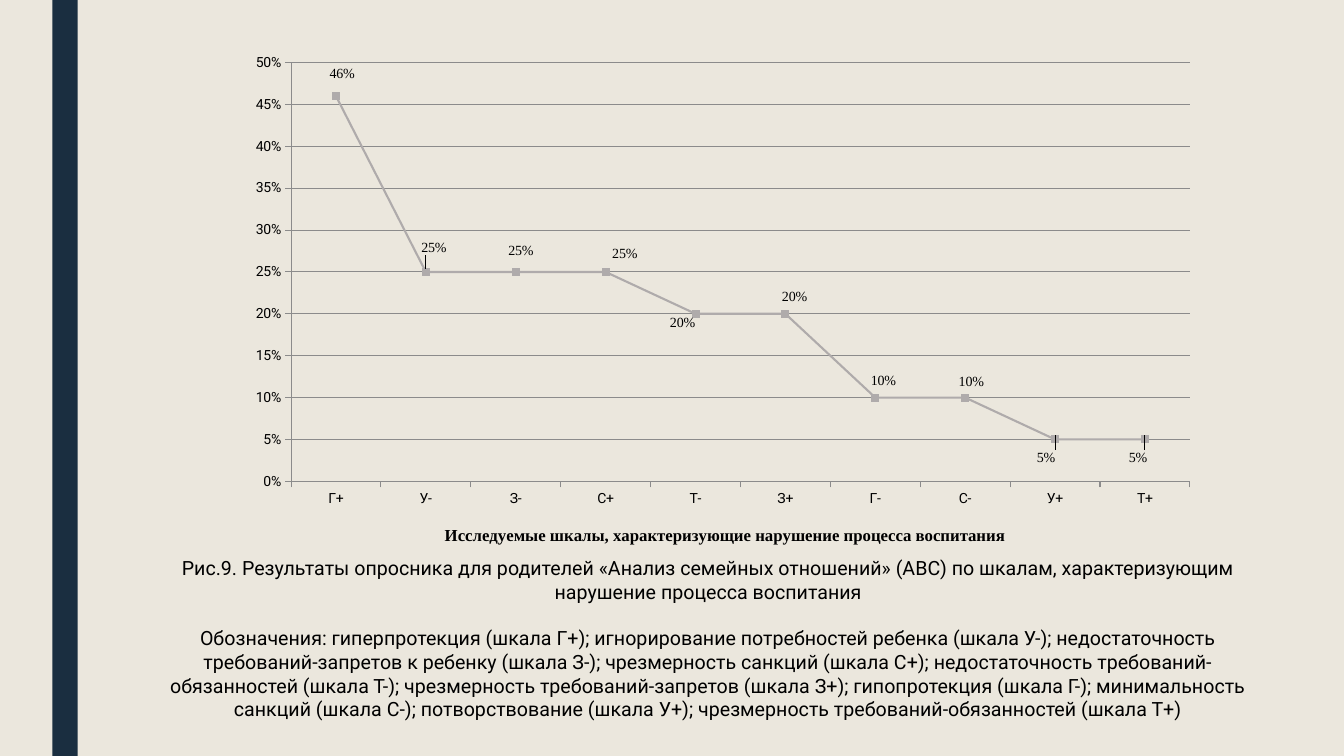
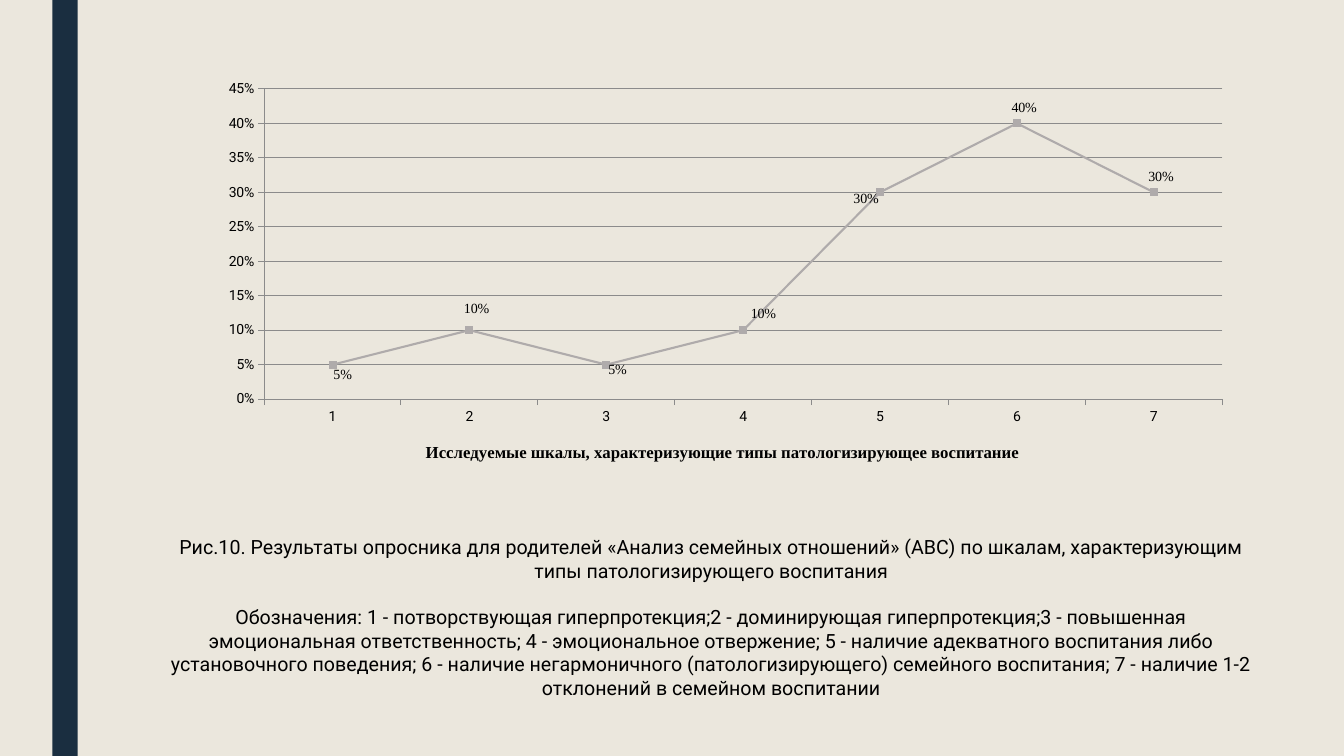
from dataclasses import dataclass

from lxml import etree
from pptx import Presentation
from pptx import util as u
from pptx.chart import data as chart_data
from pptx.dml.color import RGBColor
from pptx.enum import chart as charts
from pptx.enum import shapes, text
from pptx.oxml.ns import qn

# Shared look
PAPER = RGBColor(0xEB, 0xE7, 0xDD)
NAVY = RGBColor(0x1A, 0x2E, 0x40)
BLACK = RGBColor(0, 0, 0)
SERIES_GRAY = RGBColor(0xAF, 0xAB, 0xAB)
AXIS_GRAY = RGBColor(0x8B, 0x8B, 0x8B)
SANS, SERIF = "Roboto", "Times New Roman"
LABEL_RISE = -0.12  # centre of a label placed above its point, in inches


@dataclass(frozen=True)
class Box:
    left: float
    top: float
    width: float
    height: float

    def lengths(self) -> list[u.Length]:
        return [u.Inches(n) for n in (self.left, self.top, self.width, self.height)]


@dataclass(frozen=True)
class Reading:
    scale: str
    share: float
    dx: float  # label centre relative to the point, in inches
    dy: float


@dataclass(frozen=True)
class Figure:
    chart_box: Box
    plot_area: Box  # fractions of the chart
    top_share: float
    axis_title: str
    title_corner: tuple[float, float]  # fractions of the chart
    readings: list[Reading]
    caption_box: Box
    caption: str
    legend: str


FIGURES = [
    Figure(
        chart_box=Box(2.12, 0.32, 9.83, 5.28),
        plot_area=Box(0.078, 0.057, 0.907, 0.787),
        top_share=0.5,
        axis_title="Исследуемые шкалы, характеризующие нарушение процесса воспитания",
        title_corner=(0.23, 0.92),
        readings=[
            Reading("Г+", 0.46, 0.06, -0.19),
            Reading("У-", 0.25, 0.08, -0.21),
            Reading("З-", 0.25, 0.05, -0.18),
            Reading("С+", 0.25, 0.19, -0.15),
            Reading("Т-", 0.2, -0.13, 0.12),
            Reading("З+", 0.2, 0.09, -0.14),
            Reading("Г-", 0.1, 0.08, -0.13),
            Reading("С-", 0.1, 0.06, -0.12),
            Reading("У+", 0.05, -0.09, 0.21),
            Reading("Т+", 0.05, -0.07, 0.21),
        ],
        caption_box=Box(1.31, 5.47, 11.43, 2.05),
        caption="Рис.9. Результаты опросника для родителей «Анализ семейных отношений» (АВС) "
                "по шкалам, характеризующим нарушение процесса воспитания",
        legend="Обозначения: гиперпротекция (шкала Г+); игнорирование потребностей ребенка "
               "(шкала У-); недостаточность требований-запретов к ребенку (шкала З-); "
               "чрезмерность санкций (шкала С+); недостаточность требований-обязанностей "
               "(шкала Т-); чрезмерность требований-запретов (шкала З+); гипопротекция "
               "(шкала Г-); минимальность санкций (шкала С-); потворствование (шкала У+); "
               "чрезмерность требований-обязанностей (шкала Т+)",
    ),
    Figure(
        chart_box=Box(1.78, 0.63, 10.49, 4.43),
        plot_area=Box(0.08, 0.057, 0.906, 0.695),
        top_share=0.45,
        axis_title="Исследуемые шкалы, характеризующие типы патологизирующее воспитание",
        title_corner=(0.23, 0.84),
        readings=[
            Reading("1", 0.05, 0.1, 0.13),
            Reading("2", 0.1, 0.07, -0.18),
            Reading("3", 0.05, 0.11, 0.08),
            Reading("4", 0.1, 0.2, -0.13),
            Reading("5", 0.3, -0.14, 0.1),
            Reading("6", 0.4, 0.07, -0.12),
            Reading("7", 0.3, 0.07, -0.12),
        ],
        caption_box=Box(1.55, 5.26, 11.01, 1.51),
        caption="Рис.10. Результаты опросника для родителей «Анализ семейных отношений» (АВС) "
                "по шкалам, характеризующим типы патологизирующего воспитания",
        legend="Обозначения: 1 - потворствующая гиперпротекция;2 - доминирующая "
               "гиперпротекция;3 - повышенная эмоциональная ответственность; "
               "4 - эмоциональное отвержение; 5 - наличие адекватного воспитания либо "
               "установочного поведения; 6 - наличие негармоничного (патологизирующего) "
               "семейного воспитания; 7 - наличие 1-2 отклонений в семейном воспитании",
    ),
]


def set_font(font, face: str, size: float, bold: bool = False) -> None:
    font.name, font.size, font.bold = face, u.Pt(size), bold
    font.color.rgb = BLACK


def set_layout(parent, index: int, **settings) -> None:
    """Give a chart part a manual layout as its child number index."""
    for old in parent.findall(qn("c:layout")):
        parent.remove(old)
    layout = etree.Element(qn("c:layout"))
    manual = etree.SubElement(layout, qn("c:manualLayout"))
    for tag, value in settings.items():
        etree.SubElement(manual, qn(f"c:{tag}")).set("val", str(value))
    parent.insert(index, layout)


def add_band(slide, height: int) -> None:
    band = slide.shapes.add_shape(
        shapes.MSO_SHAPE.RECTANGLE, u.Inches(0.52), 0, u.Inches(0.25), height)
    band.shadow.inherit = False
    band.fill.solid()
    band.fill.fore_color.rgb = NAVY
    band.line.fill.background()


def style_line(line, color: RGBColor, width: float) -> None:
    line.color.rgb = color
    line.width = u.Pt(width)


def style_axes(chart, figure: Figure) -> None:
    scales, shares = chart.category_axis, chart.value_axis
    for axis in (scales, shares):
        axis.major_tick_mark = charts.XL_TICK_MARK.OUTSIDE
        axis.minor_tick_mark = charts.XL_TICK_MARK.NONE
        style_line(axis.format.line, AXIS_GRAY, 0.75)
        set_font(axis.tick_labels.font, SANS, 10)
    shares.minimum_scale, shares.maximum_scale = 0, figure.top_share
    shares.major_unit = 0.05
    shares.tick_labels.number_format = "0%"
    shares.tick_labels.number_format_is_linked = False
    shares.has_major_gridlines = True
    style_line(shares.major_gridlines.format.line, AXIS_GRAY, 0.75)

    heading = scales.axis_title.text_frame.paragraphs[0]
    heading.text = figure.axis_title
    set_font(heading.font, SERIF, 12, bold=True)
    x, y = figure.title_corner
    set_layout(chart.element.xpath(".//c:catAx/c:title")[0], 1,
               xMode="edge", yMode="edge", x=x, y=y)


def style_series(chart, figure: Figure) -> None:
    plot = chart.plots[0]
    plot.vary_by_categories = False
    series = plot.series[0]
    series.smooth = False
    style_line(series.format.line, SERIES_GRAY, 1.5)
    marker = series.marker
    marker.style, marker.size = charts.XL_MARKER_STYLE.SQUARE, 5
    marker.format.fill.solid()
    marker.format.fill.fore_color.rgb = SERIES_GRAY
    style_line(marker.format.line, SERIES_GRAY, 0.75)

    # Value labels, each shifted from its place above the point
    labels = series.data_labels
    labels.show_value = True
    labels.number_format, labels.number_format_is_linked = "0%", False
    set_font(labels.font, SERIF, 10)
    for index in range(len(figure.readings)):
        label = series.points[index].data_label
        set_font(label.font, SERIF, 10)
        label.position = charts.XL_LABEL_POSITION.ABOVE
    for element, reading in zip(chart.element.xpath(".//c:dLbl"), figure.readings):
        set_layout(element, 1,
                   x=round(reading.dx / figure.chart_box.width, 4),
                   y=round((reading.dy - LABEL_RISE) / figure.chart_box.height, 4))


def add_line_chart(slide, figure: Figure) -> None:
    shares = chart_data.CategoryChartData(number_format="0%")
    shares.categories = [reading.scale for reading in figure.readings]
    shares.add_series("Series 1", [reading.share for reading in figure.readings])
    chart = slide.shapes.add_chart(
        charts.XL_CHART_TYPE.LINE_MARKERS, *figure.chart_box.lengths(), shares).chart
    chart.has_title = chart.has_legend = False
    set_font(chart.font, SANS, 10)
    style_axes(chart, figure)
    style_series(chart, figure)
    area = figure.plot_area
    set_layout(chart.element.xpath(".//c:plotArea")[0], 0,
               layoutTarget="inner", xMode="edge", yMode="edge",
               x=area.left, y=area.top, w=area.width, h=area.height)


def add_caption(slide, figure: Figure) -> None:
    frame = slide.shapes.add_textbox(*figure.caption_box.lengths()).text_frame
    frame.word_wrap = True
    frame.auto_size = text.MSO_AUTO_SIZE.SHAPE_TO_FIT_TEXT
    caption, legend = frame.paragraphs[0], frame.add_paragraph()
    caption.text, legend.text = figure.caption, figure.legend
    legend.space_before = u.Pt(16.4)
    for paragraph in (caption, legend):
        paragraph.alignment = text.PP_ALIGN.CENTER
        set_font(paragraph.font, SANS, 14)


def main() -> None:
    deck = Presentation()
    deck.slide_width, deck.slide_height = u.Inches(13.33), u.Inches(7.5)
    paper = deck.slide_master.background.fill
    paper.solid()
    paper.fore_color.rgb = PAPER
    for figure in FIGURES:
        slide = deck.slides.add_slide(deck.slide_layouts[6])
        add_band(slide, deck.slide_height)
        add_line_chart(slide, figure)
        add_caption(slide, figure)
    deck.save("out.pptx")


if __name__ == "__main__":
    main()
